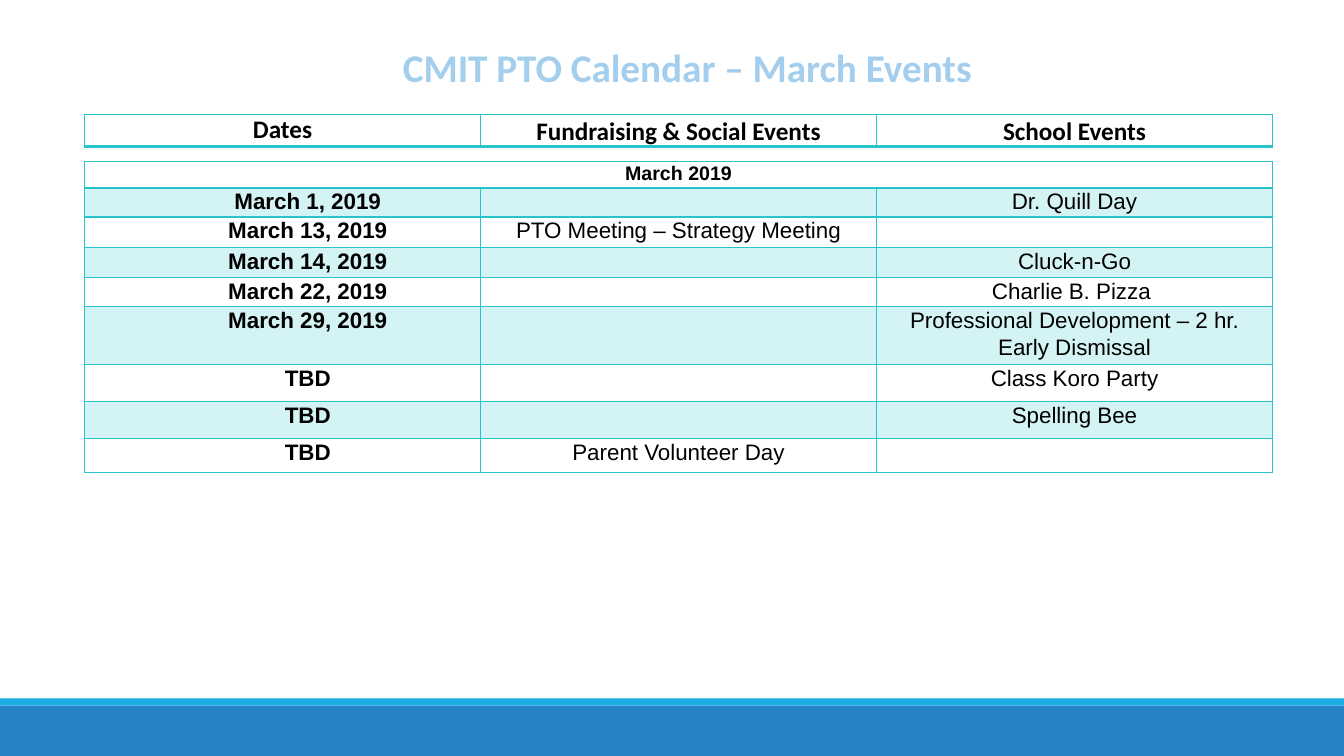
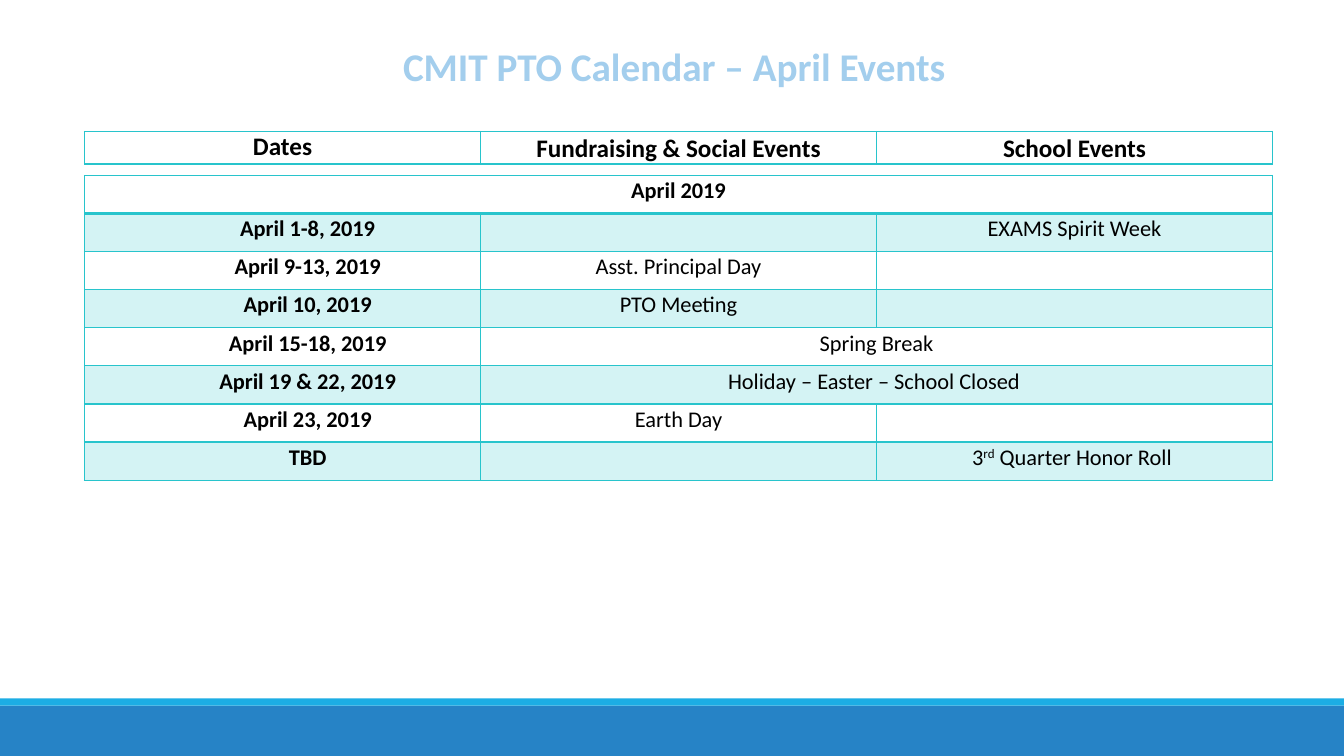
import pptx
import pptx.dml.color
import pptx.enum.shapes
import pptx.enum.text
import pptx.oxml.ns
import pptx.util
from lxml import etree

Cm, Pt = pptx.util.Cm, pptx.util.Pt
qn = pptx.oxml.ns.qn
CENTER = pptx.enum.text.PP_ALIGN.CENTER

COLORS = {"title": "A3CEED", "band": "2683C6", "stripe": "1CADE4",
          "grid": "28C4CC", "text": "000000"}
BANDS = [("band", 17.78, 1.27), ("stripe", 17.6, 0.18)]  # colour, top, height
HEADINGS = ("Dates", "Fundraising & Social Events", "School Events")

# The last entry of a short row spans the remaining columns; ^...^ is superscript.
MONTHS = [
    {
        "title": "CMIT PTO Calendar – March Events ", "title_at": (8.69, 0.97),
        "header_top": 2.88, "body_top": 4.06, "font": "Arial", "month_size": 14,
        "heights": [0.68, 0.73, 0.76, 0.77, 0.71, 1.47, 0.93, 0.93, 0.86],
        "rows": [
            ("March 2019",),
            ("March 1, 2019", "", "Dr. Quill Day"),
            ("March 13, 2019", "PTO Meeting – Strategy Meeting", ""),
            ("March 14, 2019", "", "Cluck-n-Go"),
            ("March 22, 2019", "", "Charlie B. Pizza "),
            ("March 29, 2019", "", "Professional Development – 2 hr. Early Dismissal"),
            ("TBD", "", "Class Koro Party"),
            ("TBD", "", "Spelling Bee"),
            ("TBD", "Parent Volunteer Day", ""),
        ],
    },
    {
        "title": "CMIT PTO Calendar – April Events ", "title_at": (8.36, 0.94),
        "header_top": 3.31, "body_top": 4.42, "font": "Calibri", "month_size": 16,
        "heights": [0.96] * 8,
        "rows": [
            ("April 2019",),
            ("April 1-8, 2019", "", "EXAMS Spirit Week"),
            ("April 9-13, 2019", "Asst. Principal Day", ""),
            ("April 10, 2019", "PTO Meeting", ""),
            ("April 15-18, 2019", "Spring Break"),
            ("April 19 & 22, 2019", "Holiday – Easter – School Closed "),
            ("April 23, 2019", "Earth Day", ""),
            ("TBD", "", "3^rd^ Quarter Honor Roll "),
        ],
    },
]

SLIDE_W, SLIDE_H = 33.87, 19.05
TABLE_LEFT, COL_W = 2.13, 9.98
LINE_SPACING = 1.07


def rgb(name):
    return pptx.dml.color.RGBColor.from_string(COLORS[name])


def make_line(parent, tag, width, color):
    ln = etree.SubElement(parent, qn(tag), w=str(Pt(width)))
    fill = etree.SubElement(ln, qn("a:solidFill"))
    etree.SubElement(fill, qn("a:srgbClr"), val=COLORS[color])
    return ln


def add_run(p, text, font, size, bold, color):
    r = p.add_run()
    r.text = text
    r.font.name, r.font.size, r.font.bold = font, Pt(size), bold
    r.font.color.rgb = rgb(color)
    return r


def add_bands(slide):
    for color, top, height in BANDS:
        sp = slide.shapes.add_shape(pptx.enum.shapes.MSO_SHAPE.RECTANGLE,
                                    0, Cm(top), Cm(SLIDE_W), Cm(height))
        sp.shadow.inherit = False
        sp.fill.solid()
        sp.fill.fore_color.rgb = rgb(color)
        sp.line.fill.background()


def add_title(slide, text, left, top):
    tf = slide.shapes.add_textbox(Cm(left), Cm(top), Cm(17.48), Cm(1.45)).text_frame
    tf.word_wrap = True
    p = tf.paragraphs[0]
    p.alignment = CENTER
    r = add_run(p, text, "Calibri", 28, True, "title")
    rPr = r.font._element
    rPr.insert(0, make_line(rPr, "a:ln", 1.75, "band"))


def style_cell(cell, row, shaded):
    """Set borders, fill and margins; the first row has a heavier bottom edge."""
    tcPr = cell._tc.get_or_add_tcPr()
    for side in "LRTB":
        make_line(tcPr, "a:ln" + side, 2 if side == "B" and row == 0 else 1, "grid")
    if shaded:
        cell.fill.solid()
        cell.fill.fore_color.rgb = rgb("grid")
        tint = tcPr.find(qn("a:solidFill")).find(qn("a:srgbClr"))
        etree.SubElement(tint, qn("a:alpha"), val="20000")
    else:
        cell.fill.background()
    cell.margin_left = cell.margin_right = Cm(0.17)
    cell.margin_top = cell.margin_bottom = 0


def fill_cell(cell, text, font, size, bold, indent, spacing):
    p = cell.text_frame.paragraphs[0]
    p.alignment, p.line_spacing = CENTER, spacing
    if indent:
        pPr = p._p.get_or_add_pPr()
        pPr.set("marL", "0")
        pPr.set("indent", str(Cm(1.27)))
    if not text:
        etree.SubElement(p._p, qn("a:endParaRPr"), sz=str(size * 100))
        return
    for i, part in enumerate(text.split("^")):
        r = add_run(p, part, font, size, bold, "text")
        if i % 2:
            r.font._element.set("baseline", "30000")


def add_grid(slide, top, rows, heights, font, sizes, first_spacing=LINE_SPACING):
    """Add a table; sizes holds the text size of the first row and of the rest."""
    cols = len(HEADINGS)
    table = slide.shapes.add_table(len(rows), cols, Cm(TABLE_LEFT), Cm(top),
                                   Cm(COL_W * cols), Cm(sum(heights))).table
    table.first_row = table.horz_banding = False
    for col in table.columns:
        col.width = Cm(COL_W)
    for i, (texts, height) in enumerate(zip(rows, heights)):
        table.rows[i].height = Cm(height)
        last = len(texts) - 1
        if last < cols - 1:
            table.cell(i, last).merge(table.cell(i, cols - 1))
        for j in range(cols):
            cell = table.cell(i, j)
            style_cell(cell, i, i % 2 == 1)
            fill_cell(cell, texts[j] if j <= last else "", font, sizes[min(i, 1)],
                      bold=i == 0 or j == 0, indent=i > 0 and j == 0,
                      spacing=first_spacing if i == j == 0 else LINE_SPACING)


def main():
    prs = pptx.Presentation()
    prs.slide_width, prs.slide_height = Cm(SLIDE_W), Cm(SLIDE_H)
    for month in MONTHS:
        slide = prs.slides.add_slide(prs.slide_layouts[6])
        add_bands(slide)
        add_title(slide, month["title"], *month["title_at"])
        add_grid(slide, month["header_top"], [HEADINGS], [0.79], "Calibri", (18, 18),
                 first_spacing=1.0)
        add_grid(slide, month["body_top"], month["rows"], month["heights"],
                 month["font"], (month["month_size"], 16))
    prs.save("out.pptx")


if __name__ == "__main__":
    main()
